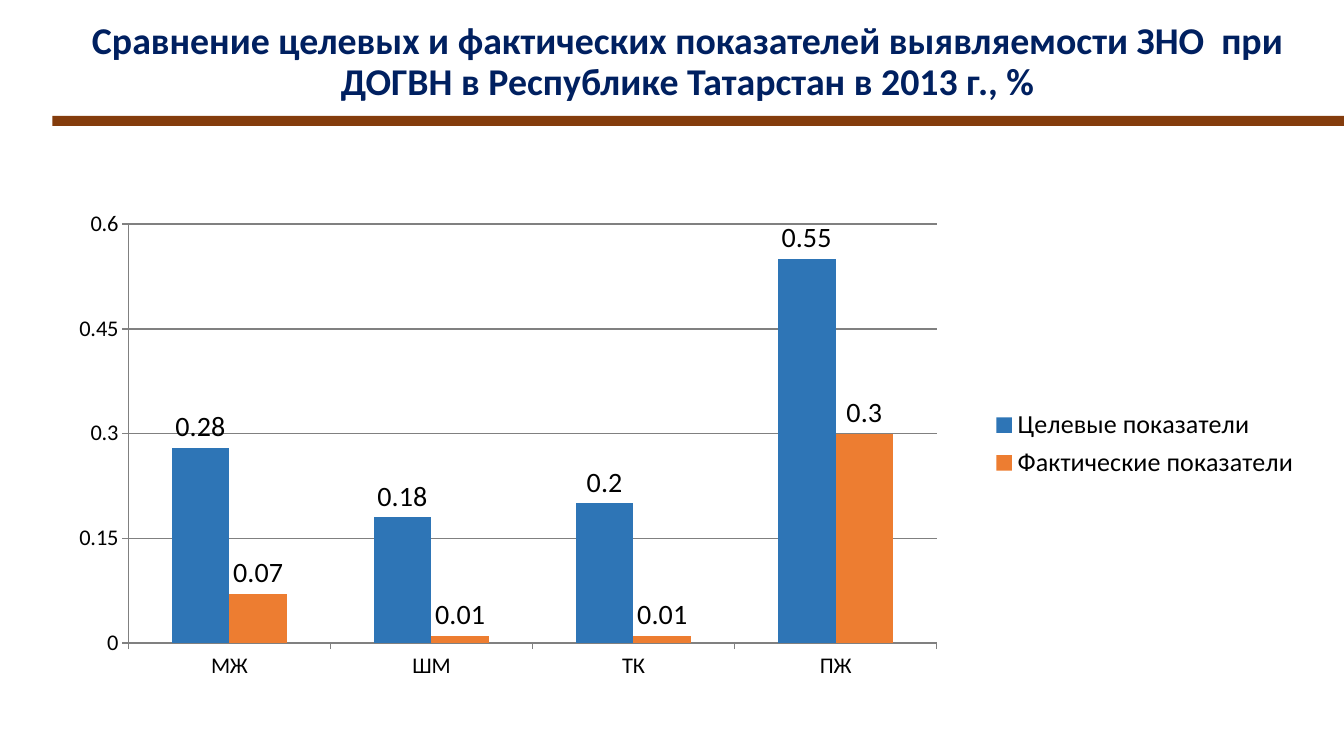
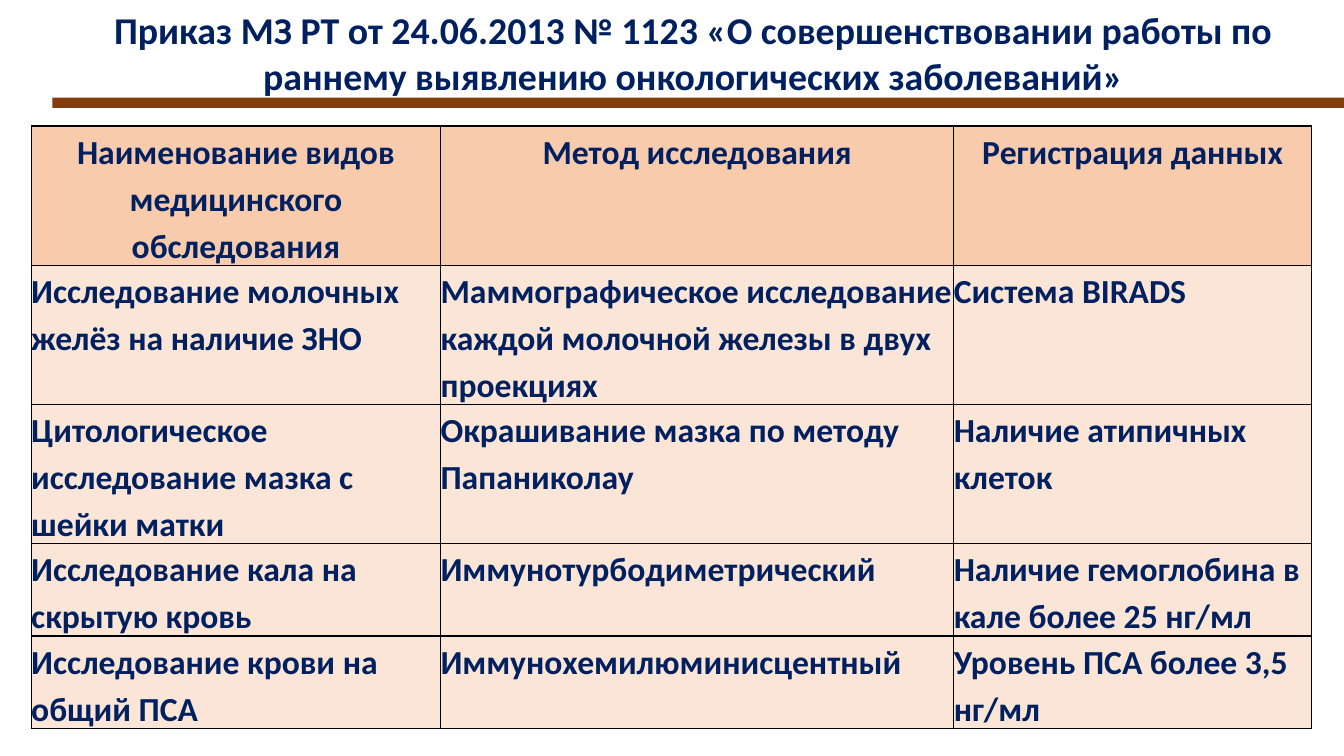
import pptx
import pptx.util
import pptx.oxml
import pptx.oxml.ns
import pptx.chart.data
import pptx.dml.color
import pptx.enum.chart
import pptx.enum.shapes
import pptx.enum.text
from lxml import etree

Inches = pptx.util.Inches
Pt = pptx.util.Pt
RGBColor = pptx.dml.color.RGBColor
qn = pptx.oxml.ns.qn
ALIGN = pptx.enum.text.PP_ALIGN
ANCHOR = pptx.enum.text.MSO_ANCHOR
CHART = pptx.enum.chart

NAVY = RGBColor(0x00, 0x20, 0x60)
BROWN = RGBColor(0x84, 0x3C, 0x0C)
PEACH = RGBColor(0xF8, 0xCB, 0xAD)
CREAM = RGBColor(0xFB, 0xE5, 0xD6)
BLUE = RGBColor(0x2E, 0x75, 0xB6)
ORANGE = RGBColor(0xED, 0x7D, 0x31)
GRAY = RGBColor(0x80, 0x80, 0x80)
BLACK = RGBColor(0x00, 0x00, 0x00)

FACE = "Calibri"
HEAD = {"name": FACE, "size": Pt(27), "bold": True}
BODY = {"name": FACE, "size": Pt(24), "bold": True}
SIDES = ("left", "right", "top", "bottom")

CATS = ("МЖ", "ШМ", "ТК", "ПЖ")
SERIES = (
    ("Целевые показатели", (0.28, 0.18, 0.2, 0.55), BLUE),
    ("Фактические показатели", (0.07, 0.01, 0.01, 0.3), ORANGE),
)
PLOT = {"x": 0.055, "y": 0.054, "w": 0.646, "h": 0.85}

COLS = (4.06, 5.09, 3.55)
ROWS = (1.38, 1.38, 1.38, 0.92, 0.92)
CELLS = (
    ("Наименование видов медицинского обследования",
     "Метод исследования", "Регистрация данных"),
    ("Исследование молочных желёз на наличие ЗНО",
     "Маммографическое исследование каждой молочной железы в двух проекциях",
     "Система BIRADS"),
    ("Цитологическое исследование мазка с шейки матки",
     "Окрашивание мазка по методу Папаниколау",
     "Наличие атипичных клеток"),
    ("Исследование кала на скрытую кровь", "Иммунотурбодиметрический",
     "Наличие гемоглобина в кале более 25 нг/мл"),
    ("Исследование крови на общий ПСА", "Иммунохемилюминисцентный",
     "Уровень ПСА более 3,5 нг/мл"),
)


def style(item, form):
    for key, value in form.items():
        setattr(item, key, value)


def ink(font, form, color):
    style(font, form)
    font.color.rgb = color


def lengths(box):
    return [Inches(n) for n in box]


def add_title(slide, box, text, inset, anchor, spacing):
    frame = slide.shapes.add_textbox(*lengths(box)).text_frame
    style(frame, {"word_wrap": True, "vertical_anchor": anchor})
    style(frame, {f"margin_{side}": Inches(inset) for side in SIDES})
    para = frame.paragraphs[0]
    style(para, {"text": text, "alignment": ALIGN.CENTER,
                 "line_spacing": spacing})
    ink(para.runs[0].font, HEAD, NAVY)


def add_band(slide, top):
    band = slide.shapes.add_shape(pptx.enum.shapes.MSO_SHAPE.RECTANGLE,
                                  *lengths((0.52, top, 12.81, 0.1)))
    band.shadow.inherit = False
    band.fill.solid()
    band.fill.fore_color.rgb = BROWN
    band.line.fill.background()


def draw_line(line):
    line.color.rgb = GRAY
    line.width = Pt(1)


def set_plot(chart):
    """Pin the inner plot area to fixed fractions of the chart."""
    area = chart._chartSpace.find(".//" + qn("c:plotArea"))
    for old in area.findall(qn("c:layout")):
        area.remove(old)
    layout = etree.Element(qn("c:layout"))
    manual = etree.SubElement(layout, qn("c:manualLayout"))
    marks = {"layoutTarget": "inner", "xMode": "edge", "yMode": "edge", **PLOT}
    for tag, value in marks.items():
        etree.SubElement(manual, qn("c:" + tag), val=str(value))
    area.insert(0, layout)


def add_bars(slide, box):
    data = pptx.chart.data.CategoryChartData()
    data.categories = CATS
    for name, values, _ in SERIES:
        data.add_series(name, values)
    chart = slide.shapes.add_chart(CHART.XL_CHART_TYPE.COLUMN_CLUSTERED,
                                   *lengths(box), data).chart
    style(chart, {"has_title": False, "has_legend": True})
    ink(chart.font, {"name": FACE, "size": Pt(10)}, BLACK)
    style(chart.legend, {"position": CHART.XL_LEGEND_POSITION.RIGHT,
                         "include_in_layout": True})
    ink(chart.legend.font, {"name": FACE, "size": Pt(18.6)}, BLACK)

    for axis in (chart.category_axis, chart.value_axis):
        axis.major_tick_mark = CHART.XL_TICK_MARK.OUTSIDE
        ink(axis.tick_labels.font, {"name": FACE, "size": Pt(16)}, BLACK)
        draw_line(axis.format.line)
    scale = chart.value_axis
    style(scale, {"minimum_scale": 0, "maximum_scale": 0.6,
                  "major_unit": 0.15, "has_major_gridlines": True})
    draw_line(scale.major_gridlines.format.line)
    mask = {"number_format": "0.##", "number_format_is_linked": False}
    style(scale.tick_labels, mask)

    plot = chart.plots[0]
    style(plot, {"gap_width": 150, "overlap": 0, "vary_by_categories": False})
    for bars, (_, _, color) in zip(plot.series, SERIES):
        bars.format.fill.solid()
        bars.format.fill.fore_color.rgb = color
        labels = bars.data_labels
        style(labels, {"show_value": True, **mask,
                       "position": CHART.XL_LABEL_POSITION.OUTSIDE_END})
        ink(labels.font, {"name": FACE, "size": Pt(20)}, BLACK)
    set_plot(chart)


def add_edges(cell):
    props = cell._tc.get_or_add_tcPr()
    for side in "LRTB":
        edge = etree.SubElement(props, qn("a:ln" + side), w=str(Pt(1)))
        fill = etree.SubElement(edge, qn("a:solidFill"))
        etree.SubElement(fill, qn("a:srgbClr"), val=str(BLACK))


def fill_cell(cell, text, color, align):
    style(cell, {f"margin_{side}": 0 for side in SIDES})
    add_edges(cell)
    cell.fill.solid()
    cell.fill.fore_color.rgb = color
    para = cell.text_frame.paragraphs[0]
    style(para, {"text": text, "alignment": align, "line_spacing": 1.15})
    ink(para.runs[0].font, BODY, NAVY)


def add_grid(slide, left, top):
    box = (left, top, sum(COLS), sum(ROWS))
    table = slide.shapes.add_table(len(ROWS), len(COLS), *lengths(box)).table
    style(table, {"first_row": False, "horz_banding": False})
    for col, width in zip(table.columns, COLS):
        col.width = Inches(width)
    for i, (row, height, texts) in enumerate(zip(table.rows, ROWS, CELLS)):
        row.height = Inches(height)
        look = (CREAM, ALIGN.LEFT) if i else (PEACH, ALIGN.CENTER)
        for cell, text in zip(row.cells, texts):
            fill_cell(cell, text, *look)


def chart_slide(slide):
    add_title(slide, (0.75, 0.11, 12.14, 1.02),
              "Сравнение целевых и фактических показателей выявляемости ЗНО  при "
              "ДОГВН в Республике Татарстан в 2013 г., %",
              0.05, ANCHOR.MIDDLE, 0.9)
    add_bars(slide, (0.59, 1.96, 12.41, 4.89))
    add_band(slide, 1.15)


def table_slide(slide):
    add_grid(slide, 0.31, 1.25)
    add_title(slide, (0.73, 0, 12.29, 0.99),
              "Приказ МЗ РТ от 24.06.2013 № 1123 «О совершенствовании работы по "
              "раннему выявлению онкологических заболеваний»",
              0.07, ANCHOR.TOP, 1.0)
    add_band(slide, 0.97)


def main():
    deck = pptx.Presentation()
    style(deck, {"slide_width": Inches(13.33), "slide_height": Inches(7.5)})
    for build in (chart_slide, table_slide):
        build(deck.slides.add_slide(deck.slide_layouts[6]))
    deck.save("out.pptx")


if __name__ == "__main__":
    main()
